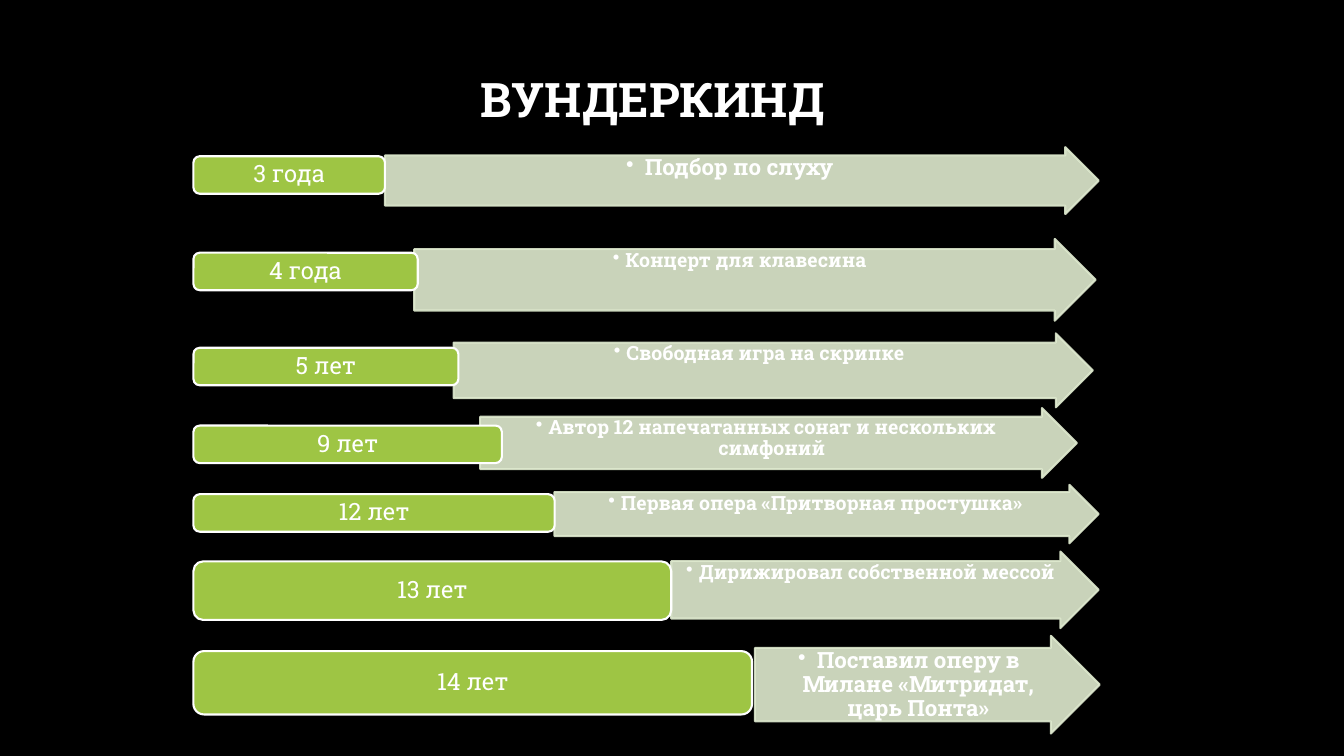
from pptx import Presentation
from pptx.dml.color import RGBColor
from pptx.enum.shapes import MSO_SHAPE
from pptx.enum.text import MSO_ANCHOR, MSO_AUTO_SIZE, PP_ALIGN
from pptx.oxml.ns import qn
from pptx.util import Pt
from lxml import etree

ARROW = MSO_SHAPE.RIGHT_ARROW
PILL = MSO_SHAPE.ROUNDED_RECTANGLE
TOP = MSO_ANCHOR.TOP
MIDDLE = MSO_ANCHOR.MIDDLE
CENTER = PP_ALIGN.CENTER
NO_AUTOFIT = MSO_AUTO_SIZE.NONE

FONT = "Roboto Slab"
COLORS = {"page": "000000", "text": "FFFFFF", "pill": "9EC544", "arrow": "DFEACF"}
PILL_LEFT = 138.2
ARROW_OPACITY = 90
BULLET_INDENTS = {14: 9, 16: 13.5}

# age, (pill top, width, height), achievement, (arrow left, top, width, height), text size
MILESTONES = [
    ("3 года", (111.6, 136.8, 26.8), "Подбор по слуху", (275, 105.1, 509.8, 47.8), 16),
    ("4 года", (180.5, 160.2, 26.8), "Концерт для клавесина", (295.9, 170.7, 486.7, 58.4), 14),
    ("5 лет", (248.4, 189.2, 26.8), "Свободная игра на скрипке", (324, 238.1, 456.6, 52.8), 14),
    ("9 лет", (304, 220.3, 26.8), "Автор 12 напечатанных сонат и нескольких симфоний",
     (343, 291.5, 426.2, 49.8), 14),
    ("12 лет", (353, 258, 26.8), "Первая опера «Притворная простушка»",
     (396, 346.3, 388.8, 41.8), 14),
    ("13 лет", (401, 341.3, 41.8), "Дирижировал собственной мессой",
     (479.5, 394, 305.3, 54.7), 14),
    ("14 лет", (465.1, 399, 45.2), "Поставил оперу в Милане «Митридат, царь Понта»",
     (539.2, 454.2, 246.3, 69.8), 16),
]


def color(name):
    return RGBColor.from_string(COLORS[name])


def write(frame, text, size, bold, anchor, margins):
    frame.word_wrap = True
    frame.auto_size = NO_AUTOFIT
    frame.vertical_anchor = anchor
    frame.margin_left = frame.margin_right = Pt(margins[0])
    frame.margin_top = frame.margin_bottom = Pt(margins[1])
    para = frame.paragraphs[0]
    para.alignment = CENTER
    para.line_spacing = 0.9
    para.space_before = Pt(0)
    span = para.add_run()
    span.text = text
    span.font.name = FONT
    span.font.size = Pt(size)
    span.font.bold = bold
    span.font.color.rgb = color("text")


def add_bullet(para, indent):
    para.level = 1
    properties = para._p.get_or_add_pPr()
    properties.set("marL", str(Pt(indent)))
    properties.set("indent", str(-Pt(indent)))
    etree.SubElement(properties, qn("a:buChar")).set("char", "•")


def add_block(page, kind, place, fill, line):
    box = page.shapes.add_shape(kind, *(Pt(length) for length in place))
    box.shadow.inherit = False
    box.fill.solid()
    box.fill.fore_color.rgb = color(fill)
    box.line.color.rgb = color(line)
    box.line.width = Pt(1.5)
    return box


def add_arrow(page, text, place, size):
    box = add_block(page, ARROW, place, "arrow", "arrow")
    box.adjustments[0] = 0.75
    box.adjustments[1] = 0.5
    for tint in box._element.spPr.iter(qn("a:srgbClr")):
        etree.SubElement(tint, qn("a:alpha")).set("val", str(ARROW_OPACITY * 1000))
    add_bullet(box.text_frame.paragraphs[0], BULLET_INDENTS[size])
    write(box.text_frame, text, size, True, TOP, (0.7, 0.7))


def add_pill(page, text, top, width, height):
    box = add_block(page, PILL, (PILL_LEFT, top, width, height), "pill", "text")
    write(box.text_frame, text, 17, False, MIDDLE, (5, 2.6))


def set_title(page, text):
    title = page.shapes.title
    title.left, title.top = Pt(59), Pt(20.9)
    title.width, title.height = Pt(815), Pt(104.4)
    write(title.text_frame, text, 34, True, MIDDLE, (7.2, 3.6))


def main():
    deck = Presentation()
    deck.slide_width, deck.slide_height = Pt(960), Pt(540)
    page = deck.slides.add_slide(deck.slide_layouts.get_by_name("Title Only"))
    page.background.fill.solid()
    page.background.fill.fore_color.rgb = color("page")
    set_title(page, "ВУНДЕРКИНД")
    for age, pill, achievement, arrow, size in MILESTONES:
        add_arrow(page, achievement, arrow, size)
        add_pill(page, age, *pill)
    deck.save("out.pptx")


if __name__ == "__main__":
    main()
